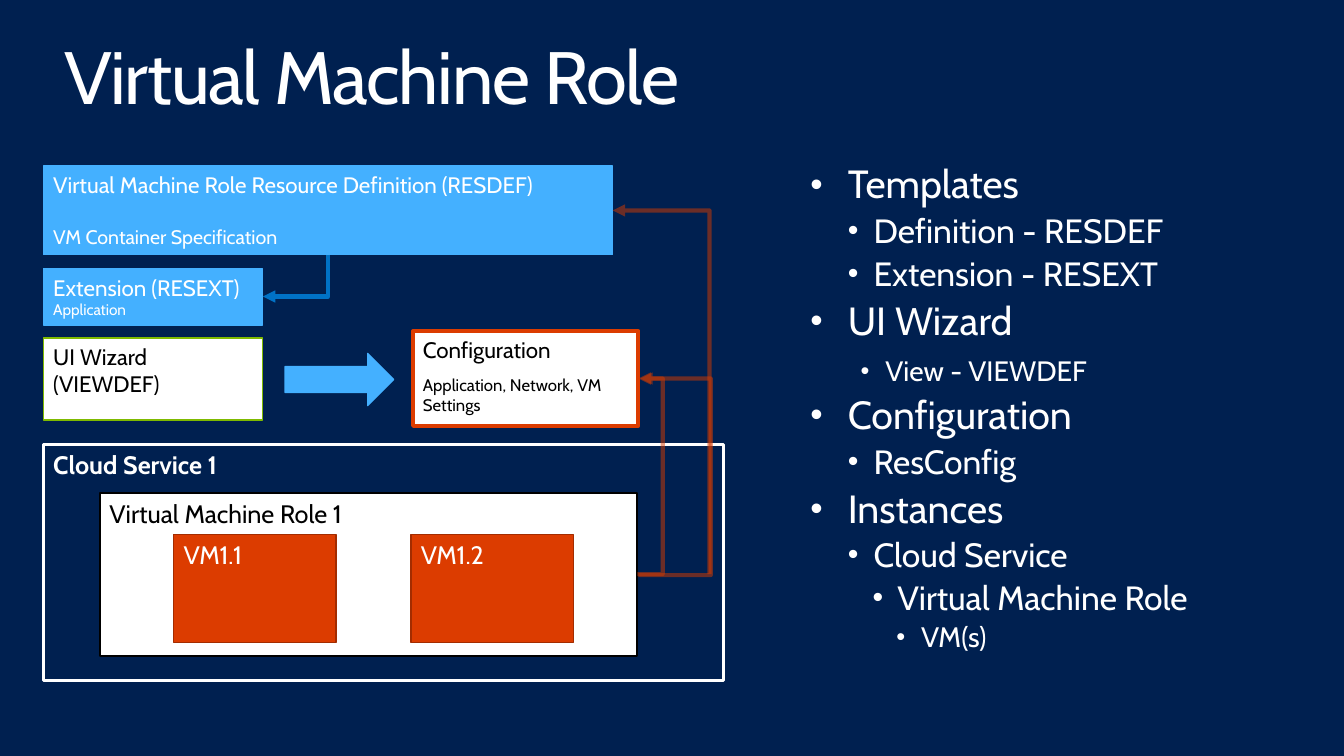
from dataclasses import dataclass
from typing import Optional

from lxml import etree
from pptx import Presentation
from pptx.dml.color import RGBColor
from pptx.enum.shapes import MSO_CONNECTOR, MSO_SHAPE
from pptx.enum.text import MSO_ANCHOR, PP_ALIGN
from pptx.oxml.ns import qn
from pptx.util import Inches, Pt

RECT, DOWN = MSO_SHAPE.RECTANGLE, MSO_SHAPE.DOWN_ARROW
ELBOW = MSO_CONNECTOR.ELBOW
LEFT, TOP = PP_ALIGN.LEFT, MSO_ANCHOR.TOP
FONT = "Cabin"
HUES = {
    "navy": "002050", "white": "FFFFFF", "black": "000000", "sky": "44B0FF",
    "blue": "0072C6", "red": "DC3C00", "rust": "A32C00", "flame": "D73B00",
    "green": "7FBA00",
}


@dataclass
class Line:
    text: str
    size: float
    gap: float = 0
    bold: bool = False


@dataclass
class Box:
    at: tuple[float, float, float, float]
    fill: Optional[str]
    edge: str
    width: float
    ink: str = "white"
    lines: tuple[Line, ...] = ()
    kind: int = RECT
    turn: int = 0


@dataclass
class Route:
    start: tuple[float, float]
    end: tuple[float, float]
    hue: str
    turn: int = 0
    bend: Optional[float] = None
    alpha: int = 100


@dataclass
class Point:
    text: str
    size: float
    left: float
    hang: float
    level: int = 0
    gap: Optional[float] = None


VM_TOP, VM_WIDE, VM_TALL = 5.41, 1.64, 1.09
BOXES = [
    Box((0.44, 4.5, 6.88, 2.39), None, "white", 2.25,
        lines=(Line("Cloud Service 1", 18.4, bold=True),)),
    Box((1.01, 4.99, 5.44, 1.65), "white", "black", 1.5, "black",
        (Line("Virtual Machine Role 1", 18.4),)),
    *(Box((1.76 + 2.4 * i, VM_TOP, VM_WIDE, VM_TALL), "red", "rust", 0.85,
          lines=(Line(f"VM1.{i + 1}", 18.4),)) for i in range(2)),
    Box((0.44, 1.68, 5.76, 0.9), "sky", "sky", 0.85,
        lines=(Line("Virtual Machine Role Resource Definition (RESDEF)", 16.3),
               Line("VM Container Specification", 14.3, 19.8))),
    Box((0.44, 2.72, 2.22, 0.57), "sky", "sky", 0.85,
        lines=(Line("Extension (RESEXT)", 16.3), Line("Application", 11.2))),
    Box((4.18, 3.35, 2.28, 0.96), "white", "red", 3, "black",
        (Line("Configuration", 16.3),
         Line("Application, Network, VM Settings", 12.2, 8.6))),
    Box((0.44, 3.42, 2.22, 0.83), "white", "green", 0.85, "black",
        (Line("UI Wizard (VIEWDEF)", 16.3),)),
    Box((3.17, 3.29, 0.53, 1.1), "sky", "sky", 0.85, kind=DOWN, turn=270),
]
ROUTES = [
    Route((2.78, 2.46), (3.2, 3.12), "blue", turn=90),
    Route((6.45, 5.81), (6.46, 3.83), "flame", bend=26, alpha=50),
    Route((4.85, 4.46), (8.53, 3.48), "flame", turn=270, alpha=50),
    Route((6.46, 5.82), (6.48, 3.83), "flame", bend=36.5, alpha=50),
]
POINTS = [
    Point("Templates", 28.6, 0.38, 0.38, gap=0),
    Point("Definition - RESDEF", 24.5, 0.64, 0.26, 1),
    Point("Extension - RESEXT", 24.5, 0.64, 0.26, 1),
    Point("UI Wizard", 28.6, 0.38, 0.38),
    Point("View - VIEWDEF", 20.4, 0.76, 0.25, 2, 10.2),
    Point("Configuration", 28.6, 0.38, 0.38),
    Point("ResConfig", 24.5, 0.64, 0.26, 1),
    Point("Instances", 28.6, 0.38, 0.38),
    Point("Cloud Service", 24.5, 0.64, 0.26, 1),
    Point("Virtual Machine Role", 24.5, 0.88, 0.25, 2),
    Point("VM(s)", 20.5, 1.12, 0.25, 3),
]


def paint(name: str) -> RGBColor:
    return RGBColor.from_string(HUES[name])


def write(frame, text: str, *, size: float, ink: str = "white", bold: bool = False,
          gap: float = 0, lead: Optional[float] = None, track: int = 0,
          point: Optional[Point] = None) -> None:
    para = frame.paragraphs[0]
    if para.runs:
        para = frame.add_paragraph()
    if point:
        props = para._p.get_or_add_pPr()
        props.set("marL", str(Inches(point.left)))
        props.set("indent", str(-Inches(point.hang)))
        etree.SubElement(props, qn("a:buSzPct"), val="90000")
        etree.SubElement(props, qn("a:buFont"), typeface="Arial")
        etree.SubElement(props, qn("a:buChar"), char="•")
        para.level = point.level
    para.alignment = LEFT
    if lead:
        para.line_spacing = lead
    if gap:
        para.space_before = Pt(gap)
    run = para.add_run()
    run.text = text
    font = run.font
    font.name, font.size, font.bold = FONT, Pt(size), bold
    font.color.rgb = paint(ink)
    if track:
        run._r.get_or_add_rPr().set("spc", str(track))


def draw_box(slide, box: Box) -> None:
    shape = slide.shapes.add_shape(box.kind, *map(Inches, box.at))
    shape.shadow.inherit = False
    shape.rotation = box.turn
    if box.fill:
        shape.fill.solid()
        shape.fill.fore_color.rgb = paint(box.fill)
    else:
        shape.fill.background()
    shape.line.color.rgb = paint(box.edge)
    shape.line.width = Pt(box.width)
    frame = shape.text_frame
    frame.word_wrap = True
    frame.vertical_anchor = TOP
    for line in box.lines:
        write(frame, line.text, size=line.size, ink=box.ink, bold=line.bold, gap=line.gap)


def draw_route(slide, route: Route) -> None:
    link = slide.shapes.add_connector(ELBOW, *map(Inches, route.start + route.end))
    link.line.color.rgb = paint(route.hue)
    link.line.width = Pt(3)
    props = link._element.spPr
    if route.turn:
        props.find(qn("a:xfrm")).set("rot", str(route.turn * 60000))
    shape = props.find(qn("a:prstGeom"))
    if route.bend is None:
        shape.set("prst", "bentConnector2")
    else:
        etree.SubElement(shape.find(qn("a:avLst")), qn("a:gd"), name="adj1",
                         fmla=f"val {round(route.bend * 100000)}")
    stroke = props.find(qn("a:ln"))
    if route.alpha < 100:
        tint = stroke.find(qn("a:solidFill")).find(qn("a:srgbClr"))
        etree.SubElement(tint, qn("a:alpha"), val=str(route.alpha * 1000))
    etree.SubElement(stroke, qn("a:tailEnd"), type="triangle")
    etree.SubElement(props, qn("a:effectLst"))


def add_frame(slide, left: float, top: float, width: float, height: float):
    frame = slide.shapes.add_textbox(*map(Inches, (left, top, width, height))).text_frame
    frame.word_wrap = True
    frame.vertical_anchor = TOP
    frame.margin_left = frame.margin_right = Inches(0.16)
    frame.margin_top = frame.margin_bottom = Inches(0.1)
    return frame


def main() -> None:
    deck = Presentation()
    deck.slide_width, deck.slide_height = Inches(13.6), Inches(7.65)
    slide = deck.slides.add_slide(deck.slide_layouts[6])
    slide.background.fill.solid()
    slide.background.fill.fore_color.rgb = paint("navy")
    title = add_frame(slide, 0.49, 0.31, 11.73, 0.89)
    write(title, "Virtual Machine Role", size=54, lead=0.9, track=-100)
    body = add_frame(slide, 8.04, 1.57, 4.84, 5.76)
    for point in POINTS:
        gap = point.size * 0.2 if point.gap is None else point.gap
        write(body, point.text, size=point.size, gap=gap, lead=0.9, point=point)
    for box in BOXES:
        draw_box(slide, box)
    for route in ROUTES:
        draw_route(slide, route)
    deck.save("out.pptx")


if __name__ == "__main__":
    main()
